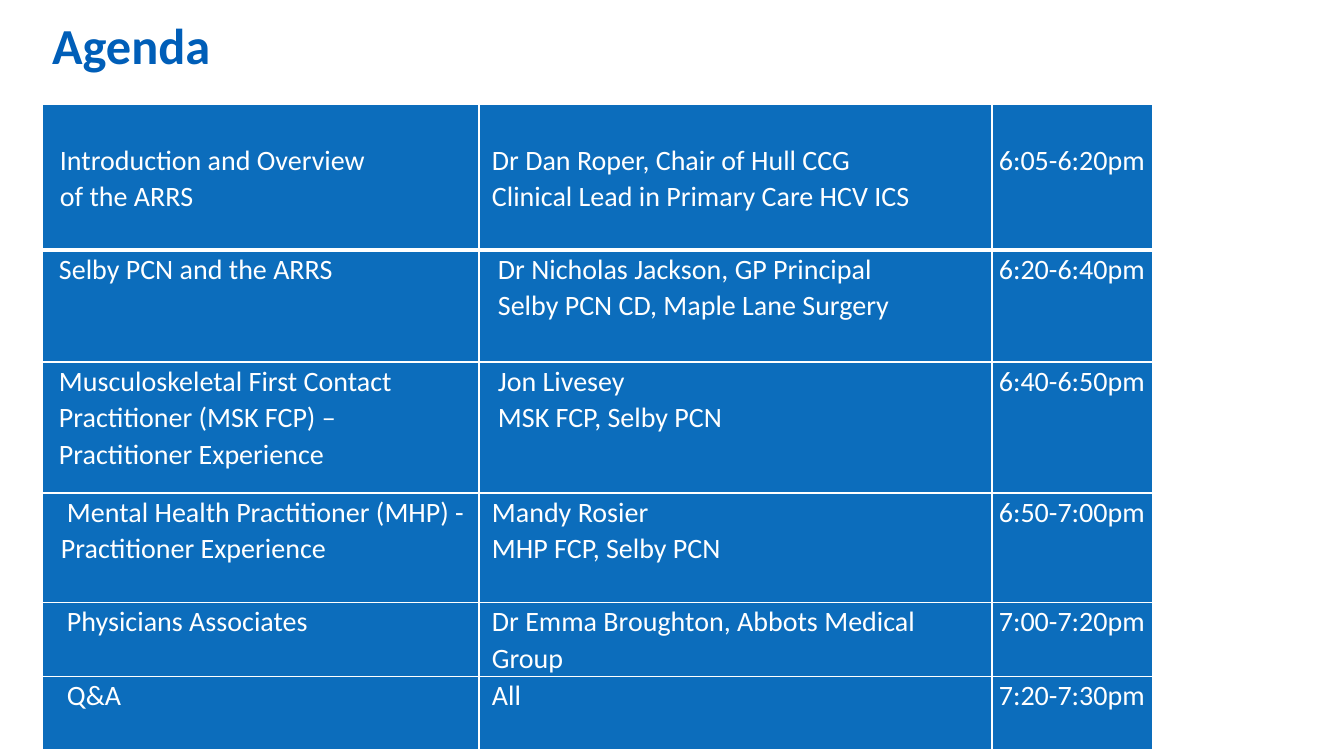
from dataclasses import dataclass

from lxml.etree import SubElement
from pptx import Presentation
from pptx.dml.color import RGBColor
from pptx.enum.text import MSO_ANCHOR, MSO_AUTO_SIZE, PP_ALIGN
from pptx.oxml.ns import qn
from pptx.slide import Slide
from pptx.table import Table, _Cell
from pptx.util import Emu, Pt

EMU_PER_PX = 914400 / 100.8
FONT = "Calibri"
COLORS = {"title": "005EB8", "cell": "0C6DBC", "white": "FFFFFF"}
COLUMN_WIDTHS = (437, 513, 161)
CELL_INSET = 7
LINE_HEIGHT = 37


@dataclass(frozen=True)
class Session:
    topic: str
    speaker: str
    time: str
    height: int
    topic_indent: int = 18
    topic_first_line: int = 0
    speaker_indent: int = 6
    top_inset: int = 0


SESSIONS = (
    Session("Introduction and Overview\nof the ARRS",
            "Dr Dan Roper, Chair of Hull CCG\nClinical Lead in Primary Care HCV ICS",
            "6:05-6:20pm", 146, topic_indent=11, top_inset=LINE_HEIGHT),
    Session("Selby PCN and the ARRS",
            "Dr Nicholas Jackson, GP Principal\nSelby PCN CD, Maple Lane Surgery",
            "6:20-6:40pm", 112, topic_indent=10, speaker_indent=12),
    Session("Musculoskeletal First Contact Practitioner (MSK FCP) –\nPractitioner Experience",
            "Jon Livesey\nMSK FCP, Selby PCN",
            "6:40-6:50pm", 131, topic_indent=10, speaker_indent=12),
    Session("Mental Health Practitioner (MHP) - Practitioner Experience",
            "Mandy Rosier\nMHP FCP, Selby PCN",
            "6:50-7:00pm", 110, topic_indent=12, topic_first_line=6),
    Session("Physicians Associates", "Dr Emma Broughton, Abbots Medical Group",
            "7:00-7:20pm", 64),
    Session("Q&A", "All", "7:20-7:30pm", 73),
)


def px(length: int) -> Emu:
    return Emu(round(length * EMU_PER_PX))


def color(name: str) -> RGBColor:
    return RGBColor.from_string(COLORS[name])


def set_borders(cell: _Cell, top: int, bottom: int) -> None:
    properties = cell._tc.get_or_add_tcPr()
    for side, width in (("L", 1), ("R", 1), ("T", top), ("B", bottom)):
        line = SubElement(properties, qn(f"a:ln{side}"), w=str(Pt(width)))
        fill = SubElement(line, qn("a:solidFill"))
        SubElement(fill, qn("a:srgbClr"), val=COLORS["white"])


def write_cell(cell: _Cell, text: str, indent: int, first_line: int, top_inset: int) -> None:
    cell.margin_left = cell.margin_right = px(CELL_INSET)
    cell.margin_top, cell.margin_bottom = px(top_inset), 0
    cell.vertical_anchor = MSO_ANCHOR.TOP
    cell.fill.solid()
    cell.fill.fore_color.rgb = color("cell")
    cell.text_frame.text = text
    for para in cell.text_frame.paragraphs:
        properties = para._p.get_or_add_pPr()
        properties.set("marL", str(px(indent)))
        properties.set("indent", str(px(first_line)))
        para.line_spacing = 1.07
        para.font.name = FONT
        para.font.size = Pt(20)
        para.font.color.rgb = color("white")


def write_session(table: Table, row: int, session: Session) -> None:
    table.rows[row].height = px(session.height)
    entries = (
        (session.topic, session.topic_indent, session.topic_first_line),
        (session.speaker, session.speaker_indent, 0),
        (session.time, 0, 0),
    )
    for column, (text, indent, first_line) in enumerate(entries):
        cell = table.cell(row, column)
        set_borders(cell, top=3 if row == 1 else 1, bottom=3 if row == 0 else 1)
        write_cell(cell, text, indent, first_line, session.top_inset)


def add_agenda(page: Slide) -> None:
    frame = page.shapes.add_table(
        len(SESSIONS), len(COLUMN_WIDTHS), px(42), px(104),
        px(sum(COLUMN_WIDTHS)), px(sum(session.height for session in SESSIONS)))
    table = frame.table
    table.first_row = table.horz_banding = False
    for column, width in zip(table.columns, COLUMN_WIDTHS):
        column.width = px(width)
    for row, session in enumerate(SESSIONS):
        write_session(table, row, session)


def write_title(page: Slide, text: str) -> None:
    title = page.shapes.title
    title.left, title.top, title.width, title.height = px(42), px(14), px(1078), px(68)
    title.text_frame.text = text
    title.text_frame.auto_size = MSO_AUTO_SIZE.NONE
    title.text_frame.vertical_anchor = MSO_ANCHOR.MIDDLE
    para = title.text_frame.paragraphs[0]
    para.alignment = PP_ALIGN.LEFT
    para.line_spacing = 0.9
    para.font.name = FONT
    para.font.size = Pt(36)
    para.font.bold = True
    para.font.color.rgb = color("title")


def main() -> None:
    deck = Presentation()
    deck.slide_width, deck.slide_height = px(1344), px(756)
    page = deck.slides.add_slide(deck.slide_layouts[5])
    write_title(page, "Agenda")
    add_agenda(page)
    deck.save("out.pptx")


if __name__ == "__main__":
    main()
